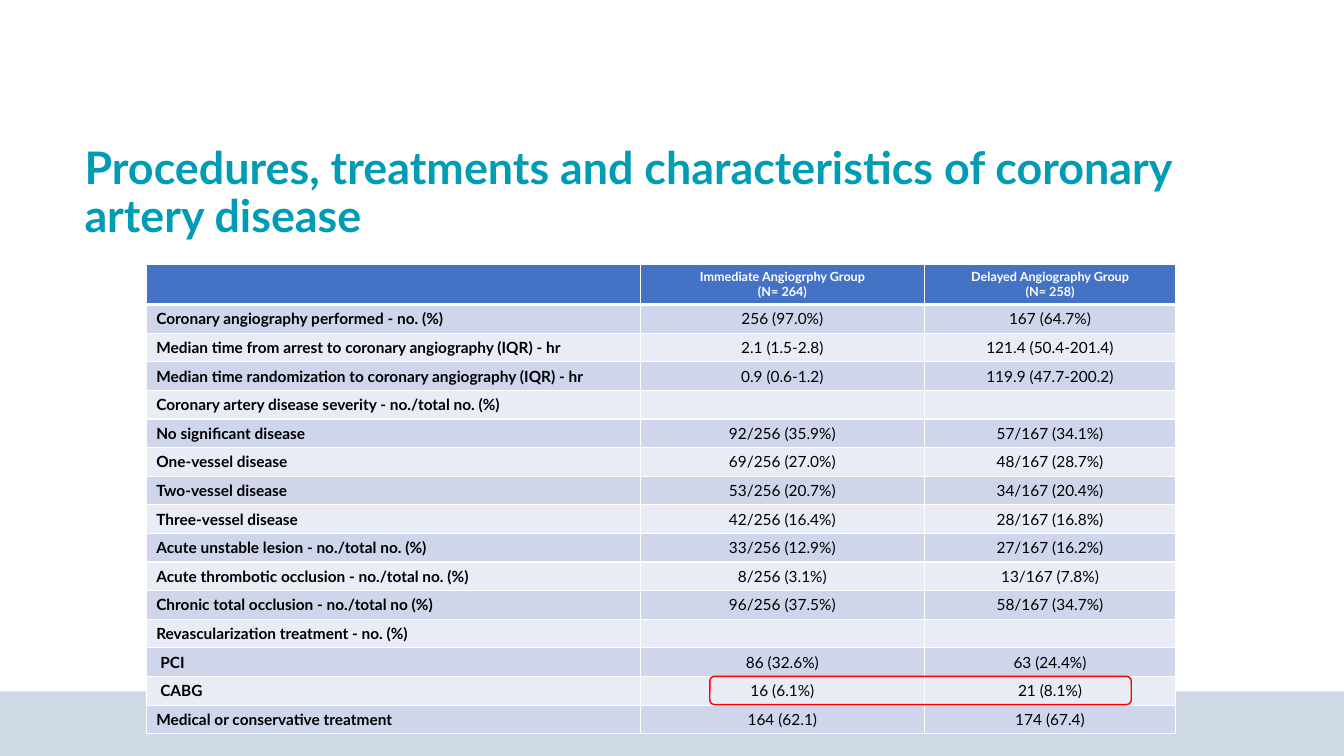
import pptx
import pptx.util
import pptx.dml.color
import pptx.enum.shapes
import pptx.enum.text
import pptx.oxml.ns
from lxml import etree

Inches, Pt = pptx.util.Inches, pptx.util.Pt
SHAPE = pptx.enum.shapes.MSO_SHAPE
ALIGN = pptx.enum.text.PP_ALIGN
ANCHOR = pptx.enum.text.MSO_ANCHOR
qn = pptx.oxml.ns.qn

FONT = "Lato"
COLORS = {
    "band": "CED9E5", "title": "009CB4", "head": "4472C4", "odd": "CFD5EA",
    "even": "E9EBF5", "white": "FFFFFF", "black": "000000", "mark": "FF0000",
}
WIDTHS = [4.9, 2.82, 2.49]
HEAD = ["", "Immediate Angiogrphy Group\n(N= 264)",
        "Delayed Angiography Group\n(N= 258)"]
ROWS = [
    ["Coronary angiography performed - no. (%)", "256 (97.0%)", "167 (64.7%)"],
    ["Median time from arrest to coronary angiography (IQR) - hr",
     "2.1 (1.5-2.8)", "121.4 (50.4-201.4)"],
    ["Median time randomization to coronary angiography (IQR) - hr",
     "0.9 (0.6-1.2)", "119.9 (47.7-200.2)"],
    ["Coronary artery disease severity - no./total no. (%)", "", ""],
    ["No significant disease", "92/256 (35.9%)", "57/167 (34.1%)"],
    ["One-vessel disease", "69/256 (27.0%)", "48/167 (28.7%)"],
    ["Two-vessel disease", "53/256 (20.7%)", "34/167 (20.4%)"],
    ["Three-vessel disease", "42/256 (16.4%)", "28/167 (16.8%)"],
    ["Acute unstable lesion - no./total no. (%)", "33/256 (12.9%)", "27/167 (16.2%)"],
    ["Acute thrombotic occlusion - no./total no. (%)", "8/256 (3.1%)", "13/167 (7.8%)"],
    ["Chronic total occlusion - no./total no (%)", "96/256 (37.5%)", "58/167 (34.7%)"],
    ["Revascularization treatment - no. (%)", "", ""],
    ["PCI", "86 (32.6%)", "63 (24.4%)"],
    ["CABG", "16 (6.1%)", "21 (8.1%)"],
    ["Medical or conservative treatment", "164 (62.1)", "174 (67.4)"],
]
INDENTED = {"PCI", "CABG"}


def rgb(name):
    return pptx.dml.color.RGBColor.from_string(COLORS[name])


def style(para, size, color, bold):
    for run in para.runs:
        font = run.font
        font.name, font.size, font.bold = FONT, Pt(size), bold
        font.color.rgb = rgb(color)


def add_shape(slide, kind, box, fill=None, line=None):
    shape = slide.shapes.add_shape(kind, *map(Inches, box))
    shape.shadow.inherit = False
    if fill:
        shape.fill.solid()
        shape.fill.fore_color.rgb = rgb(fill)
    else:
        shape.fill.background()
    if line:
        shape.line.color.rgb = rgb(line)
        shape.line.width = Pt(1)
    else:
        shape.line.fill.background()


def add_title(slide, text, box):
    frame = slide.shapes.add_textbox(*map(Inches, box)).text_frame
    frame.word_wrap = True
    frame.vertical_anchor = ANCHOR.MIDDLE
    frame.text = text
    frame.paragraphs[0].line_spacing = 0.9
    style(frame.paragraphs[0], 32, "title", True)


def set_edges(cell, top, bottom):
    """Draw white cell borders; top and bottom widths are in points."""
    props = cell._tc.get_or_add_tcPr()
    for side, width in (("L", 1), ("R", 1), ("T", top), ("B", bottom)):
        edge = etree.SubElement(props, qn("a:ln" + side), w=str(Pt(width)))
        fill = etree.SubElement(edge, qn("a:solidFill"))
        etree.SubElement(fill, qn("a:srgbClr"), val=COLORS["white"])


def fill_cell(cell, text, row, col):
    head = row == 0
    size = 9 if head else 11
    set_edges(cell, 3 if row == 1 else 1, 3 if head else 1)
    cell.fill.solid()
    cell.fill.fore_color.rgb = rgb("head" if head else "odd" if row % 2 else "even")
    if text in INDENTED:
        cell.margin_left = Inches(0.14)
    cell.text_frame.text = text
    for para in cell.text_frame.paragraphs:
        if col:
            para.alignment = ALIGN.CENTER
        style(para, size, "white" if head else "black", head or col == 0)
        if not text:  # keeps an empty cell from stretching its row
            etree.SubElement(para._p, qn("a:endParaRPr"), sz=str(size * 100))


def add_table(slide, left, top):
    data = [HEAD] + ROWS
    heights = [0.4] + [0.28] * len(ROWS)
    frame = slide.shapes.add_table(
        len(data), len(WIDTHS), Inches(left), Inches(top),
        Inches(sum(WIDTHS)), Inches(sum(heights)))
    table = frame.table
    for col, width in zip(table.columns, WIDTHS):
        col.width = Inches(width)
    for row, (texts, height) in enumerate(zip(data, heights)):
        table.rows[row].height = Inches(height)
        for col, text in enumerate(texts):
            fill_cell(table.cell(row, col), text, row, col)


def main():
    deck = pptx.Presentation()
    deck.slide_width, deck.slide_height = Inches(13.33), Inches(7.5)
    slide = deck.slides.add_slide(deck.slide_layouts[6])
    add_shape(slide, SHAPE.RECTANGLE, (0, 6.86, 13.33, 0.64), fill="band")
    add_title(slide, "Procedures, treatments and characteristics of coronary "
              "artery disease", (0.74, 1.2, 11.77, 1.45))
    add_table(slide, 1.45, 2.62)
    add_shape(slide, SHAPE.ROUNDED_RECTANGLE, (7.04, 6.71, 4.18, 0.28), line="mark")
    deck.save("out.pptx")


if __name__ == "__main__":
    main()
